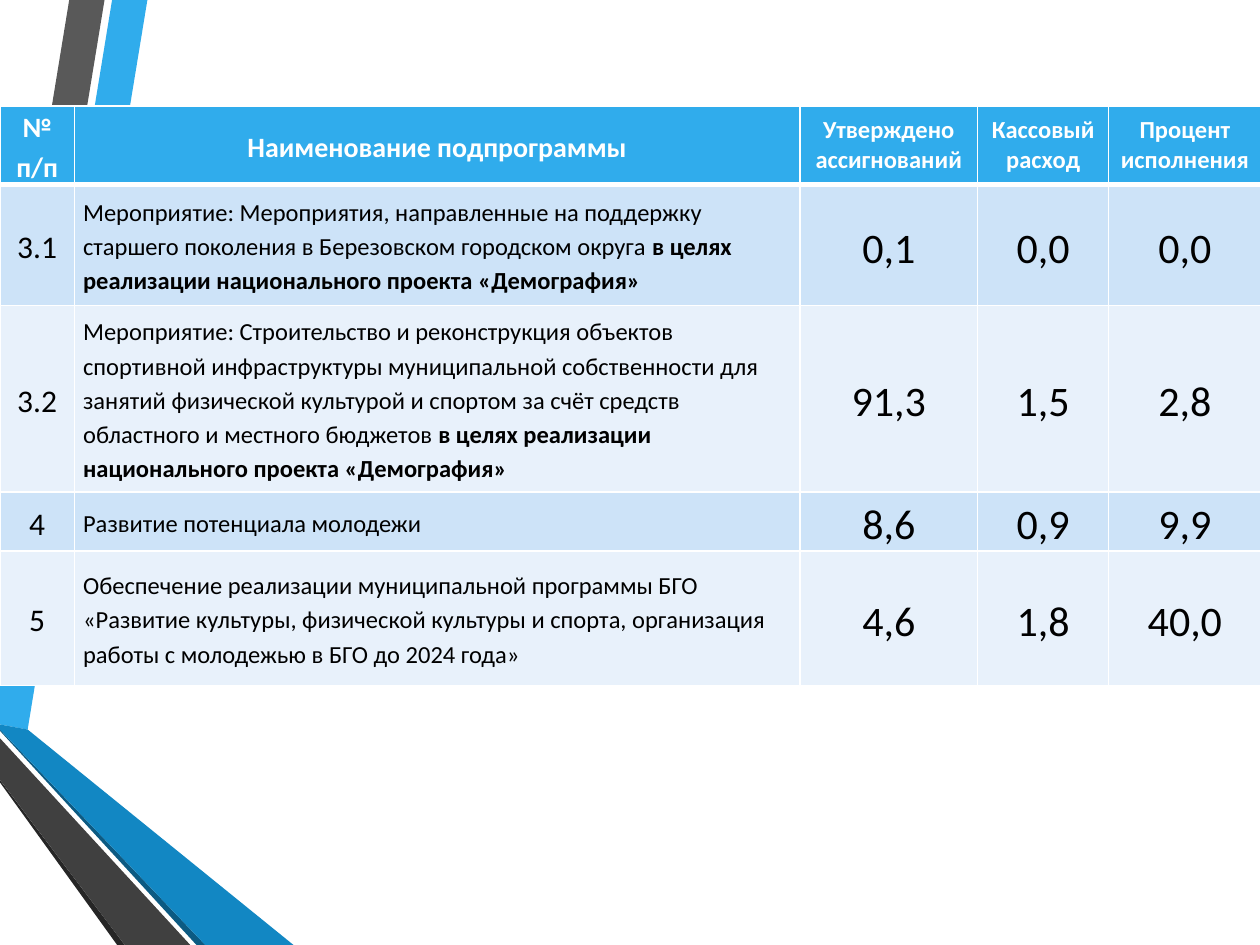
from dataclasses import dataclass

from lxml.etree import SubElement
from pptx import Presentation
from pptx.dml.color import RGBColor
from pptx.enum.text import MSO_ANCHOR, PP_ALIGN
from pptx.oxml.ns import qn
from pptx.slide import Slide
from pptx.table import _Cell
from pptx.util import Inches, Pt


@dataclass(frozen=True)
class Theme:
    font: str = "Calibri"
    blue: str = "30ACEC"
    deep_blue: str = "1287C3"
    navy: str = "0C5A82"
    grey: str = "595959"
    dark_grey: str = "404040"
    charcoal: str = "262626"
    white: str = "FFFFFF"
    black: str = "000000"
    bands: tuple[str, str] = ("CDE3F8", "E8F1FB")
    small: int = 14
    heading: int = 16
    number: int = 18
    value: int = 24
    thin: int = 1
    thick: int = 3


@dataclass(frozen=True)
class Ribbon:
    color: str
    points: tuple[tuple[float, float], ...]


@dataclass(frozen=True)
class Programme:
    number: str
    name: str
    project: str
    values: tuple[str, str, str]


@dataclass(frozen=True)
class CellStyle:
    size: int
    color: str
    fill: str
    bold: bool = False
    align: PP_ALIGN = PP_ALIGN.CENTER
    spacing: float = 1.15
    top: int = 1
    bottom: int = 1


T = Theme()
PROJECT = "в целях реализации национального проекта «Демография»"
COLS = (0.59, 5.76, 1.41, 1.04, 1.21)
ROWS = (0.54, 0.96, 1.48, 0.39, 1.07)
HEADERS = ("№ п/п", "Наименование подпрограммы", "Утверждено ассигнований",
           "Кассовый расход", "Процент исполнения")

RIBBONS = (
    Ribbon(T.blue, ((0, 5.44), (0, 5.75), (0.22, 5.79), (1.17, 0), (0.89, 0))),
    Ribbon(T.grey, ((0.83, 0), (0.55, 0), (0, 3.36), (0, 5.06))),
    Ribbon(T.charcoal, ((0, 6.19), (0, 6.21), (0.93, 7.5), (0.99, 7.5))),
    Ribbon(T.navy, ((0, 5.79), (0, 5.8), (1.56, 7.5), (1.63, 7.5))),
    Ribbon(T.deep_blue, ((0, 5.79), (1.63, 7.5), (2.33, 7.5), (0.22, 5.79), (0, 5.75))),
    Ribbon(T.dark_grey, ((0, 6.19), (0.99, 7.5), (1.51, 7.5), (0, 5.86))),
)

PROGRAMMES = (
    Programme("3.1", "Мероприятие: Мероприятия, направленные на поддержку старшего "
              "поколения в Березовском городском округа ", PROJECT, ("0,1", "0,0", "0,0")),
    Programme("3.2", "Мероприятие: Строительство и реконструкция объектов спортивной "
              "инфраструктуры муниципальной собственности для занятий физической "
              "культурой и спортом за счёт средств областного и местного бюджетов ",
              PROJECT, ("91,3", "1,5", "2,8")),
    Programme("4", "Развитие потенциала молодежи", "", ("8,6", "0,9", "9,9")),
    Programme("5", "Обеспечение реализации муниципальной программы БГО «Развитие культуры, "
              "физической культуры и спорта, организация работы с молодежью в БГО "
              "до 2024 года»", "", ("4,6", "1,8", "40,0")),
)


def draw_ribbon(s: Slide, ribbon: Ribbon) -> None:
    points = [(Inches(x), Inches(y)) for x, y in ribbon.points]
    builder = s.shapes.build_freeform(*points[0])
    builder.add_line_segments(points[1:], close=True)
    sp = builder.convert_to_shape()
    sp.shadow.inherit = False
    sp.fill.solid()
    sp.fill.fore_color.rgb = RGBColor.from_string(ribbon.color)
    sp.line.fill.background()


def set_border(cell: _Cell, side: str, width: int) -> None:
    ln = SubElement(cell._tc.get_or_add_tcPr(), qn(f"a:{side}"), w=str(Pt(width)))
    fill = SubElement(ln, qn("a:solidFill"))
    SubElement(fill, qn("a:srgbClr"), val=T.white)


def fill_cell(cell: _Cell, text: str, style: CellStyle, bold_text: str = "") -> None:
    cell.margin_left = cell.margin_right = Inches(0.07)
    cell.margin_top = cell.margin_bottom = 0
    cell.vertical_anchor = MSO_ANCHOR.MIDDLE
    borders = {"lnL": T.thin, "lnR": T.thin, "lnT": style.top, "lnB": style.bottom}
    for side, width in borders.items():
        set_border(cell, side, width)
    cell.fill.solid()
    cell.fill.fore_color.rgb = RGBColor.from_string(style.fill)
    p = cell.text_frame.paragraphs[0]
    p.text = text
    p.alignment = style.align
    p.line_spacing = style.spacing
    if bold_text:
        p.add_run().text = bold_text
    for i, r in enumerate(p.runs):
        r.font.name = T.font
        r.font.size = Pt(style.size)
        r.font.bold = style.bold or i > 0
        r.font.color.rgb = RGBColor.from_string(style.color)


def draw_table(s: Slide) -> None:
    frame = s.shapes.add_table(len(ROWS), len(COLS), 0, Inches(0.84),
                               Inches(10), Inches(sum(ROWS)))
    table = frame.table
    for column, width in zip(table.columns, COLS):
        column.width = Inches(width)
    for row, height in zip(table.rows, ROWS):
        row.height = Inches(height)
    for c, text in enumerate(HEADERS):
        size, spacing = (T.heading, 1.15) if c < 2 else (T.small, 1.0)
        style = CellStyle(size, T.white, T.blue, bold=True, spacing=spacing, bottom=T.thick)
        fill_cell(table.cell(0, c), text, style)
    for i, item in enumerate(PROGRAMMES):
        row, band = i + 1, T.bands[i % 2]
        top = T.thick if i == 0 else T.thin
        fill_cell(table.cell(row, 0), item.number,
                  CellStyle(T.number, T.black, band, top=top))
        fill_cell(table.cell(row, 1), item.name,
                  CellStyle(T.small, T.black, band, align=PP_ALIGN.LEFT, top=top),
                  item.project)
        for c, value in enumerate(item.values, 2):
            fill_cell(table.cell(row, c), value,
                      CellStyle(T.value, T.black, band, top=top))


def main() -> None:
    prs = Presentation()
    prs.slide_width, prs.slide_height = Inches(10), Inches(7.5)
    s = prs.slides.add_slide(prs.slide_layouts[6])
    for ribbon in RIBBONS:
        draw_ribbon(s, ribbon)
    draw_table(s)
    prs.save("out.pptx")


if __name__ == "__main__":
    main()
